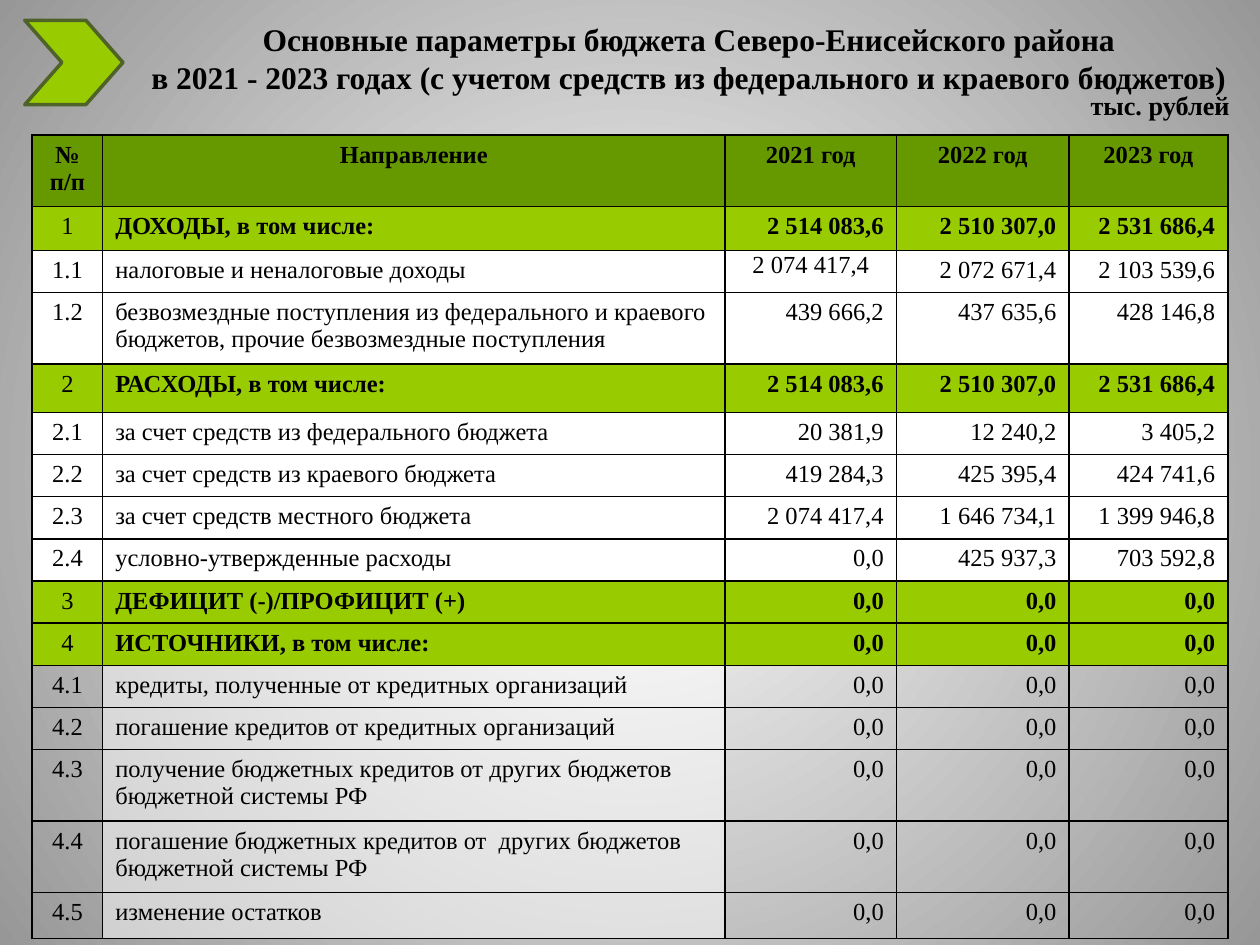
from lxml import etree
from pptx import Presentation
from pptx.dml.color import RGBColor
from pptx.enum.shapes import MSO_SHAPE
from pptx.enum.text import MSO_ANCHOR, PP_ALIGN
from pptx.oxml.ns import qn
from pptx.util import Cm, Pt

LEFT, CENTER, RIGHT = PP_ALIGN.LEFT, PP_ALIGN.CENTER, PP_ALIGN.RIGHT
MIDDLE, TOP = MSO_ANCHOR.MIDDLE, MSO_ANCHOR.TOP
CHEVRON = MSO_SHAPE.CHEVRON
FONT = "Times New Roman"
COLORS = {"text": "000000", "header": "669900", "total": "99CC00", "white": "FFFFFF",
          "outline": "4F6228", "edge": "979797"}

COL_WIDTHS = [1.42, 12.55, 3.45, 3.48, 3.2]
SINGLE, DOUBLE = 0.85, 1.44
ZEROS = ["0,0"] * 3
BALANCE = ["2 514 083,6", "2 510 307,0", "2 531 686,4"]
# Row kind, height, cell texts
ROWS = [
    ("header", DOUBLE, ["№ п/п", "Направление", "2021 год", "2022 год", "2023 год"]),
    ("total", 0.89, ["1", "ДОХОДЫ, в том числе:", *BALANCE]),
    ("item", SINGLE, ["1.1", "налоговые и неналоговые доходы",
                      "2 074 417,4", "2 072 671,4", "2 103 539,6"]),
    ("item", DOUBLE, ["1.2", "безвозмездные поступления из федерального и краевого бюджетов, "
                      "прочие безвозмездные поступления",
                      "439 666,2", "437 635,6", "428 146,8"]),
    ("total", 0.97, ["2", "РАСХОДЫ, в том числе:", *BALANCE]),
    ("item", SINGLE, ["2.1", "за счет средств из федерального бюджета",
                      "20 381,9", "12 240,2", "3 405,2"]),
    ("item", SINGLE, ["2.2", "за счет средств из краевого бюджета",
                      "419 284,3", "425 395,4", "424 741,6"]),
    ("item", SINGLE, ["2.3", "за счет средств местного бюджета",
                      "2 074 417,4", "1 646 734,1", "1 399 946,8"]),
    ("item", SINGLE, ["2.4", "условно-утвержденные расходы",
                      "0,0", "425 937,3", "703 592,8"]),
    ("total", SINGLE, ["3", "ДЕФИЦИТ (-)/ПРОФИЦИТ (+)", *ZEROS]),
    ("total", SINGLE, ["4", "ИСТОЧНИКИ, в том числе:", *ZEROS]),
    ("source", SINGLE, ["4.1", "кредиты, полученные от кредитных организаций", *ZEROS]),
    ("source", SINGLE, ["4.2", "погашение кредитов от кредитных организаций", *ZEROS]),
    ("source", DOUBLE, ["4.3", "получение бюджетных кредитов от других бюджетов "
                        "бюджетной системы РФ", *ZEROS]),
    ("source", DOUBLE, ["4.4", "погашение бюджетных кредитов от  других бюджетов "
                        "бюджетной системы РФ", *ZEROS]),
    ("source", 0.92, ["4.5", "изменение остатков", *ZEROS]),
]


def rgb(name):
    return RGBColor.from_string(COLORS[name])


def style(p, size, bold, align):
    p.alignment = align
    p.font.name, p.font.size, p.font.bold = FONT, Pt(size), bold
    p.font.color.rgb = rgb("text")


def set_background(s):
    fill = s.background.fill
    fill.gradient()
    for stop, name, position in zip(fill.gradient_stops, ("white", "edge"), (0, 1)):
        stop.color.rgb, stop.position = rgb(name), position
    grad = s.background._cSld.find(".//" + qn("a:gradFill"))
    grad.remove(grad.find(qn("a:lin")))
    radial = etree.SubElement(grad, qn("a:path"), path="circle")
    etree.SubElement(radial, qn("a:fillToRect"), l="50000", t="50000", r="50000", b="50000")


def add_text(s, box, text, size, align, anchor, inset_left=0):
    tf = s.shapes.add_textbox(*map(Cm, box)).text_frame
    tf.word_wrap, tf.vertical_anchor = True, anchor
    tf.margin_left = Cm(inset_left)
    tf.margin_top = tf.margin_right = tf.margin_bottom = 0
    tf.text = text
    style(tf.paragraphs[0], size, True, align)


def add_header(s, x, y):
    add_text(s, (x + 1.99, y - 0.08, 22.3, 1.68),
             "Основные параметры бюджета Северо-Енисейского района\v"
             "в 2021 - 2023 годах (с учетом средств из федерального и краевого бюджетов)",
             18, CENTER, MIDDLE, inset_left=0.5)
    add_text(s, (x + 20, y + 1.4, 4.29, 0.69), "тыс. рублей", 15, RIGHT, TOP)
    sp = s.shapes.add_shape(CHEVRON, Cm(x), Cm(y), Cm(1.98), Cm(1.7))
    sp.adjustments[0] = 0.44
    sp.shadow.inherit = False
    sp.fill.solid()
    sp.fill.fore_color.rgb = rgb("total")
    sp.line.color.rgb, sp.line.width = rgb("outline"), Pt(2)


def fill_cell(cell, kind, col):
    if kind == "source" and col != 1:
        cell.fill.background()
        return
    cell.fill.solid()
    cell.fill.fore_color.rgb = rgb(kind if kind in COLORS else "white")
    if kind == "source":
        color = cell._tc.tcPr.find(".//" + qn("a:srgbClr"))
        etree.SubElement(color, qn("a:alpha"), val="50000")


def add_borders(cell):
    tc_pr = cell._tc.get_or_add_tcPr()
    for i, side in enumerate(("lnL", "lnR", "lnT", "lnB")):
        ln = etree.Element(qn("a:" + side), w=str(Pt(1)))
        solid = etree.SubElement(ln, qn("a:solidFill"))
        etree.SubElement(solid, qn("a:srgbClr"), val=COLORS["text"])
        tc_pr.insert(i, ln)


def add_budget_table(s, x, y):
    height = sum(row[1] for row in ROWS)
    table = s.shapes.add_table(len(ROWS), len(COL_WIDTHS), Cm(x), Cm(y),
                               Cm(sum(COL_WIDTHS)), Cm(height)).table
    table.first_row = table.horz_banding = False
    for column, width in zip(table.columns, COL_WIDTHS):
        column.width = Cm(width)
    for r, (kind, row_height, texts) in enumerate(ROWS):
        table.rows[r].height = Cm(row_height)
        for c, text in enumerate(texts):
            cell = table.cell(r, c)
            cell.text = text
            bold = kind == "header" or (kind == "total" and c > 0)
            align = CENTER if kind == "header" or c == 0 else LEFT if c == 1 else RIGHT
            style(cell.text_frame.paragraphs[0], 14, bold, align)
            fill_cell(cell, kind, c)
            add_borders(cell)
    # The first tax income figure is centred and sits at the top of its cell
    tax = table.cell(2, 2)
    tax.text_frame.paragraphs[0].alignment = CENTER
    tax.margin_left = tax.margin_right = tax.margin_top = Cm(0.03)
    tax.margin_bottom = 0


def main():
    prs = Presentation()
    prs.slide_width, prs.slide_height = Cm(25.4), Cm(19.05)
    s = prs.slides.add_slide(prs.slide_layouts[6])
    set_background(s)
    add_header(s, 0.5, 0.41)
    add_budget_table(s, 0.65, 2.72)
    prs.save("out.pptx")


if __name__ == "__main__":
    main()
